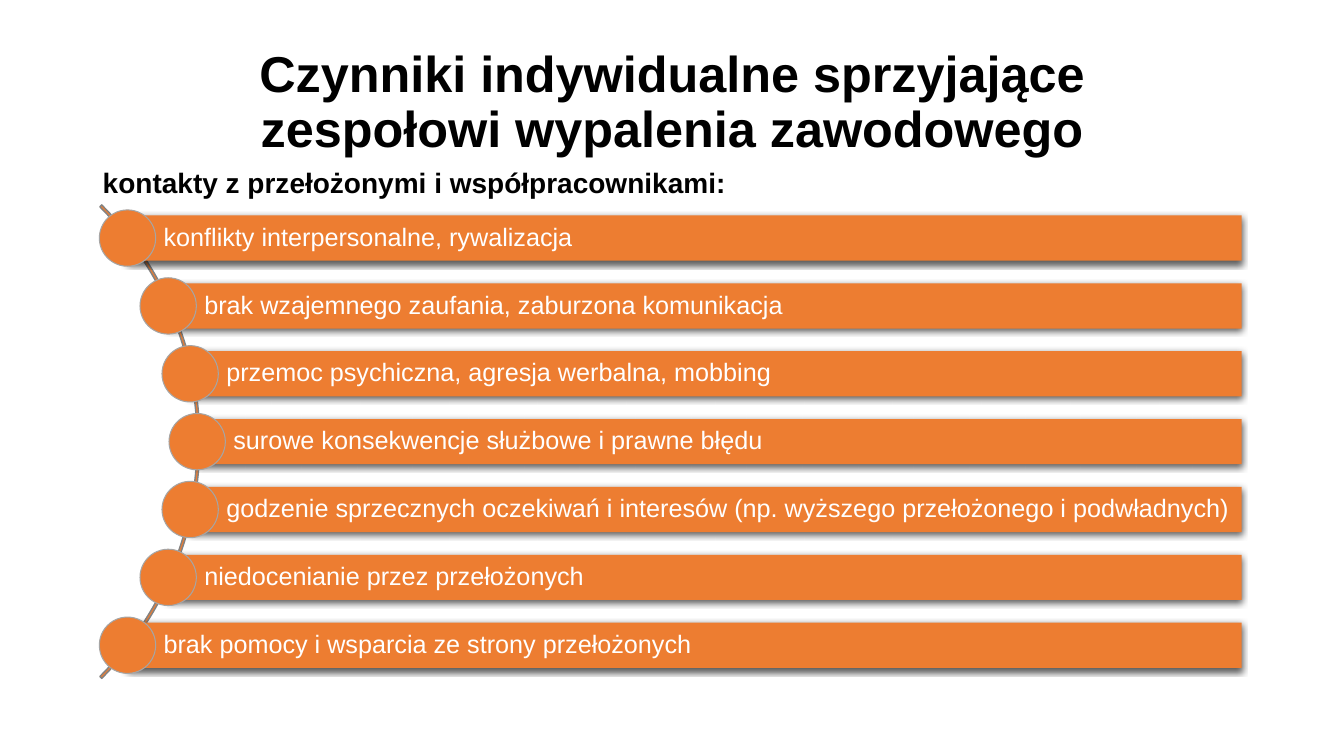
from math import sqrt

from lxml import etree
from pptx import Presentation
from pptx.dml.color import RGBColor
from pptx.enum.shapes import MSO_SHAPE
from pptx.enum.text import MSO_ANCHOR, PP_ALIGN
from pptx.oxml.ns import qn
from pptx.util import Cm, Pt

RECTANGLE, ELLIPSE, ARC = MSO_SHAPE.RECTANGLE, MSO_SHAPE.OVAL, MSO_SHAPE.BLOCK_ARC
TOP, MIDDLE = MSO_ANCHOR.TOP, MSO_ANCHOR.MIDDLE
LEFT, CENTER = PP_ALIGN.LEFT, PP_ALIGN.CENTER

NBSP = chr(160)
TITLE = (f"Czynniki indywidualne{NBSP}sprzyjające "
         f"zespołowi{NBSP}wypalenia{NBSP}zawodowego")
SUBTITLE = "kontakty z przełożonymi i współpracownikami:"
FACTORS = [
    "konflikty interpersonalne, rywalizacja",
    "brak wzajemnego zaufania, zaburzona komunikacja",
    "przemoc psychiczna, agresja werbalna, mobbing",
    "surowe konsekwencje służbowe i prawne błędu",
    "godzenie sprzecznych oczekiwań i interesów (np. wyższego przełożonego i podwładnych)",
    "niedocenianie przez przełożonych",
    "brak pomocy i wsparcia ze strony przełożonych",
]

# Geometry of the curved list, in centimetres
CENTER_X, CENTER_Y = -3.4, 11.13
ARC_SIZE = 16.87
DOT_RADIUS_FROM_CENTER = 8.37
ROW_PITCH = 1.71
BAR_HEIGHT, BAR_RIGHT = 1.14, 31.29
DOT_SIZE = 1.42


def color(value):
    return RGBColor.from_string(value)


def write(shape, text, size=18, ink="000000", bold=False, font="Arial",
          align=LEFT, anchor=TOP, spacing=1.0, insets=(0.25, 0.13, 0.25, 0.13)):
    frame = shape.text_frame
    frame.word_wrap = True
    frame.vertical_anchor = anchor
    (frame.margin_left, frame.margin_top,
     frame.margin_right, frame.margin_bottom) = map(Cm, insets)
    para = frame.paragraphs[0]
    para.alignment = align
    para.line_spacing = spacing
    span = para.add_run()
    span.text = text
    span.font.name = font
    span.font.size = Pt(size)
    span.font.bold = bold
    span.font.color.rgb = color(ink)


class SlideBuilder:
    accent = "ED7D31"
    arc_line = "828282"
    dot_line = "A5A5A5"

    def __init__(self, page):
        self.page = page

    def shape(self, kind, left, top, width, height, line=None, weight=1):
        shape = self.page.shapes.add_shape(
            kind, Cm(left), Cm(top), Cm(width), Cm(height))
        shape.shadow.inherit = False
        shape.fill.solid()
        shape.fill.fore_color.rgb = color(self.accent)
        if line:
            shape.line.color.rgb = color(line)
            shape.line.width = Pt(weight)
        else:
            shape.line.fill.background()
        return shape

    def text(self, text, left, top, width, height, **style):
        box = self.page.shapes.add_textbox(Cm(left), Cm(top), Cm(width), Cm(height))
        write(box, text, **style)

    def arc(self):
        arc = self.shape(ARC, CENTER_X - ARC_SIZE / 2, CENTER_Y - ARC_SIZE / 2,
                         ARC_SIZE, ARC_SIZE, line=self.arc_line)
        for index, value in enumerate((189, 27, 0.004)):
            arc.adjustments[index] = value

    def bar(self, text, left, middle):
        bar = self.shape(RECTANGLE, left, middle - BAR_HEIGHT / 2,
                         BAR_RIGHT - left, BAR_HEIGHT)
        self.drop_shadow(bar)
        write(bar, text, ink="FFFFFF", anchor=MIDDLE, spacing=0.9,
              insets=(0.91, 0.15, 0.15, 0.15))

    def dot(self, x, y):
        self.shape(ELLIPSE, x - DOT_SIZE / 2, y - DOT_SIZE / 2,
                   DOT_SIZE, DOT_SIZE, line=self.dot_line, weight=0.75)

    def drop_shadow(self, shape):
        effects = shape.element.spPr.find(qn("a:effectLst"))
        shadow = etree.SubElement(
            effects, qn("a:outerShdw"), blurRad=str(Pt(4.5)), dist=str(Pt(1.5)),
            dir="5400000", algn="ctr", rotWithShape="0")
        tint = etree.SubElement(shadow, qn("a:srgbClr"), val="000000")
        etree.SubElement(tint, qn("a:alpha"), val="63000")


def main():
    deck = Presentation()
    deck.slide_width, deck.slide_height = Cm(33.87), Cm(19.05)
    builder = SlideBuilder(deck.slides.add_slide(deck.slide_layouts[6]))

    # Curved list: every dot sits on the arc and starts its bar
    builder.arc()
    for row, factor in enumerate(FACTORS):
        offset = (row - (len(FACTORS) - 1) / 2) * ROW_PITCH
        x = CENTER_X + sqrt(DOT_RADIUS_FROM_CENTER ** 2 - offset ** 2)
        builder.bar(factor, x, CENTER_Y + offset)
        builder.dot(x, CENTER_Y + offset)

    # Headings
    builder.text(SUBTITLE, 2.34, 4.04, 30.48, 1.3, size=20, bold=True)
    builder.text(TITLE, 2.34, 0.89, 29.21, 3.45, size=36, bold=True,
                 align=CENTER, anchor=MIDDLE, spacing=0.9)

    deck.save("out.pptx")


if __name__ == "__main__":
    main()
